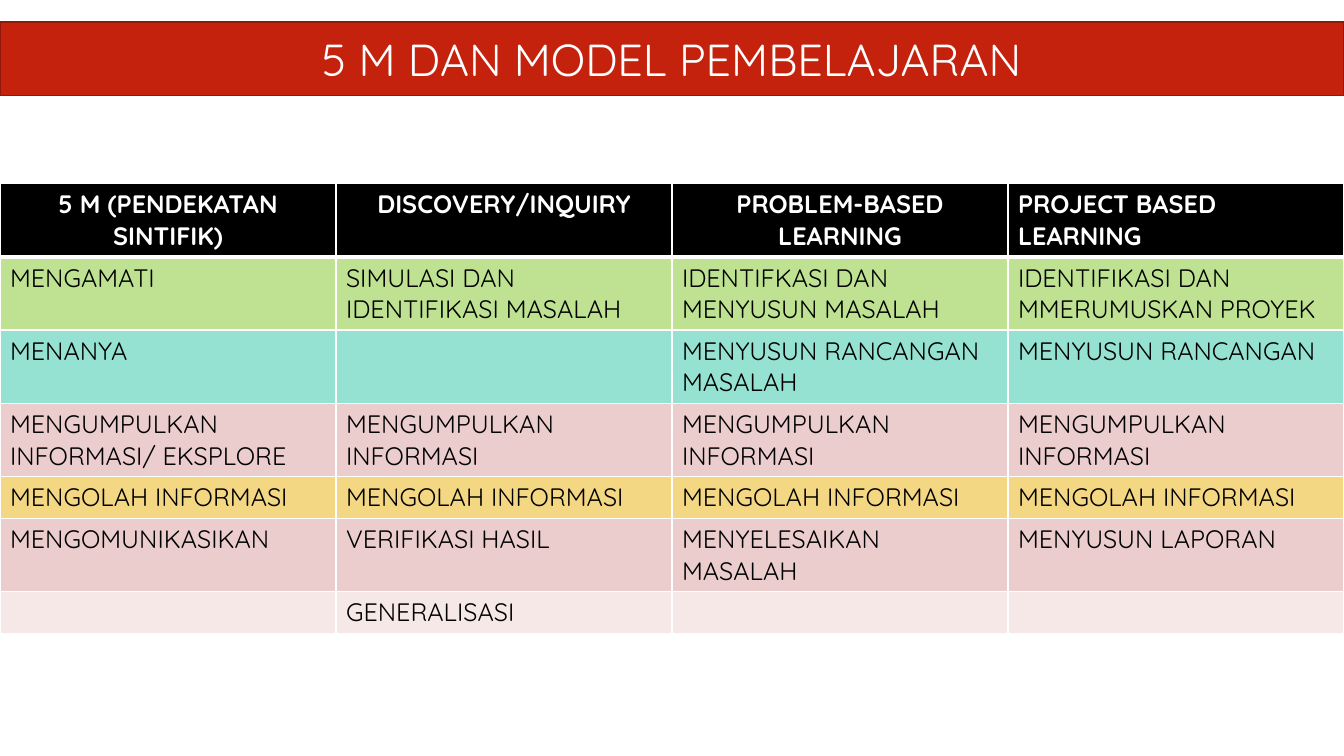
from lxml.etree import SubElement
from pptx import Presentation
from pptx.dml.color import RGBColor
from pptx.enum.shapes import MSO_SHAPE
from pptx.enum.text import MSO_ANCHOR, PP_ALIGN
from pptx.oxml.ns import qn
from pptx.util import Inches, Pt


def paint(form, hue):
    """Give a fill, or the fill of a line, one solid colour."""
    form.solid()
    form.fore_color.rgb = RGBColor.from_string(hue)


def write(frame, text, align, hue, **look):
    """Put one line of styled text into a text frame."""
    para = frame.paragraphs[0]
    para.alignment = align
    run = para.add_run()
    run.text = text
    for name, value in {"name": "Quicksand", **look}.items():
        setattr(run.font, name, value)
    paint(run.font.fill, hue)


deck = Presentation()
deck.slide_width, deck.slide_height = Inches(13.33), Inches(7.5)
slide = deck.slides.add_slide(deck.slide_layouts[6])

# Title band
band = slide.shapes.add_shape(
    MSO_SHAPE.RECTANGLE, 0, Inches(0.22), Inches(13.33), Inches(0.73))
band.shadow.inherit = False
paint(band.fill, "C4220D")
paint(band.line.fill, "91190A")
band.line.width = Pt(1)
band.text_frame.vertical_anchor = MSO_ANCHOR.MIDDLE
write(band.text_frame, "5 M DAN MODEL PEMBELAJARAN", PP_ALIGN.CENTER,
      "FFFFFF", size=Pt(32))

# Table content: row fill, then one text per learning model
rows = [
    ("000000", ["5 M (PENDEKATAN SINTIFIK)", "DISCOVERY/INQUIRY",
                "PROBLEM-BASED LEARNING", "PROJECT BASED LEARNING"]),
    ("BEE292", ["MENGAMATI", "SIMULASI DAN IDENTIFIKASI MASALAH",
                "IDENTIFKASI DAN MENYUSUN MASALAH",
                "IDENTIFIKASI DAN MMERUMUSKAN PROYEK"]),
    ("96E2D2", ["MENANYA", "", "MENYUSUN RANCANGAN MASALAH",
                "MENYUSUN RANCANGAN"]),
    ("EACDCC", ["MENGUMPULKAN INFORMASI/ EKSPLORE"]
               + ["MENGUMPULKAN INFORMASI"] * 3),
    ("F4D783", ["MENGOLAH INFORMASI"] * 4),
    ("EACDCC", ["MENGOMUNIKASIKAN", "VERIFIKASI HASIL",
                "MENYELESAIKAN MASALAH", "MENYUSUN LAPORAN"]),
    ("F5E8E7", ["", "GENERALISASI", "", ""]),
]

# Table; rows with two lines of text grow when drawn
grid = slide.shapes.add_table(
    len(rows), 4, 0, Inches(1.82), Inches(13.33), Inches(0.41 * len(rows))).table

for r, (fill, texts) in enumerate(rows):
    head = r == 0
    for c, text in enumerate(texts):
        cell = grid.cell(r, c)
        if text:
            mid = head and c < 3
            write(cell.text_frame, text,
                  PP_ALIGN.CENTER if mid else PP_ALIGN.LEFT,
                  "FFFFFF" if head else "000000", size=Pt(18), bold=head)

        # White borders, thicker between the header and the body
        props = cell._tc.get_or_add_tcPr()
        for side in ("lnL", "lnR", "lnT", "lnB"):
            thick = (r, side) in ((0, "lnB"), (1, "lnT"))
            edge = SubElement(props, qn("a:" + side), w=str(Pt(3 if thick else 1)))
            solid = SubElement(edge, qn("a:solidFill"))
            SubElement(solid, qn("a:srgbClr"), val="FFFFFF")
        paint(cell.fill, fill)

deck.save("out.pptx")
